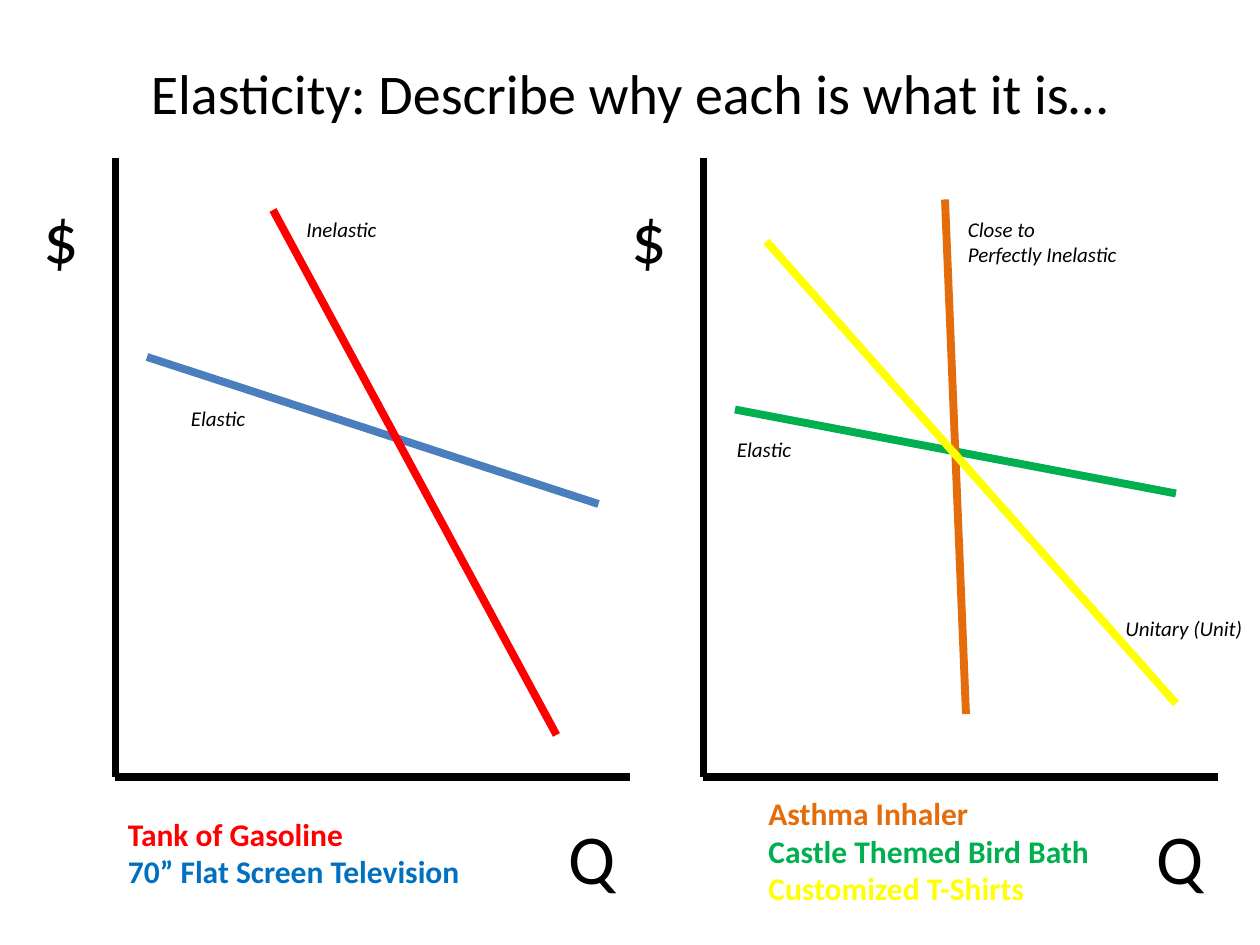
from lxml import etree
from pptx import Presentation
from pptx.dml.color import RGBColor
from pptx.enum.shapes import MSO_CONNECTOR
from pptx.enum.text import MSO_ANCHOR, MSO_AUTO_SIZE, PP_ALIGN
from pptx.oxml.ns import qn
from pptx.util import Inches, Pt

STRAIGHT = MSO_CONNECTOR.STRAIGHT
MIDDLE = MSO_ANCHOR.MIDDLE
GROW = MSO_AUTO_SIZE.SHAPE_TO_FIT_TEXT
CENTER = PP_ALIGN.CENTER

FONT = "Calibri"
CELLS_PER_INCH = 12
GRAPH_PITCH = 56
AXIS_LEFT, AXIS_TOP, AXIS_BOTTOM = 11, 15, 74
BLACK, RED, GREEN = "000000", "FF0000", "00B050"
ORANGE, YELLOW = "E46C0A", "FFFF00"

GASOLINE_GRAPH = {
    "axis_right": 60,
    "curves": [((14, 34), (57, 48), "4B7EBC"), ((26, 20), (53, 70), RED)],
    "labels": [("Inelastic", 28, 20, 3.6), ("Elastic", 17, 38, 3.6)],
    "goods_at": (11, 77, 34, 8.5),
    "goods": [("Tank of Gasoline", RED), ("70” Flat Screen Television", "0070C0")],
}
INHALER_GRAPH = {
    "axis_right": 60,
    "curves": [
        ((14, 39), (56, 47), GREEN),
        ((34, 19), (36, 68), ORANGE),
        ((17, 23), (56, 67), YELLOW),
    ],
    "labels": [
        ("Elastic", 13, 41, 3.6),
        ("Unitary (Unit)", 50, 58, 3.6),
        ("Close to\vPerfectly Inelastic", 35, 20, 6),
    ],
    "goods_at": (16, 75, 34, 12.1),
    "goods": [
        ("Asthma Inhaler", ORANGE),
        ("Castle Themed Bird Bath", GREEN),
        ("Customized T-Shirts", YELLOW),
    ],
}


def grid(cells):
    """Turn a count of grid cells into a length."""
    return Inches(cells / CELLS_PER_INCH)


def color(value):
    """Turn a hex string into a colour."""
    return RGBColor.from_string(value)


def style_para(para, size, hex_color, bold=False, italic=False):
    """Format every run of a paragraph."""
    for span in para.runs:
        span.font.name = FONT
        span.font.size = Pt(size)
        span.font.bold = bold
        span.font.italic = italic
        span.font.color.rgb = color(hex_color)


def add_line(page, start, end, hex_color):
    """Draw a thick straight line between two grid points."""
    line = page.shapes.add_connector(STRAIGHT, *map(grid, (*start, *end)))
    line.line.color.rgb = color(hex_color)
    line.line.width = Pt(4.5)
    etree.SubElement(line._element.spPr, qn("a:effectLst"))


def add_text(page, at, lines, size, **style):
    """Add a text box with one paragraph for each (text, colour) pair."""
    box = page.shapes.add_textbox(*map(grid, at))
    frame = box.text_frame
    frame.word_wrap = True
    frame.auto_size = GROW
    for index, (text, hex_color) in enumerate(lines):
        para = frame.add_paragraph() if index else frame.paragraphs[0]
        para.text = text
        style_para(para, size, hex_color, **style)


def add_title(page, text):
    """Place and format the title placeholder."""
    title = page.shapes.title
    title.left, title.top, title.width, title.height = map(grid, (6, 3.6, 108, 10.4))
    title.text_frame.text = text
    title.text_frame.vertical_anchor = MIDDLE
    para = title.text_frame.paragraphs[0]
    para.alignment = CENTER
    style_para(para, 32, BLACK)


def add_graph(page, left, graph):
    """Draw axes, demand curves, labels and goods from a left column."""
    axis = left + AXIS_LEFT
    origin = (axis, AXIS_BOTTOM)
    add_line(page, (axis, AXIS_TOP), origin, BLACK)
    add_line(page, origin, (left + graph["axis_right"], AXIS_BOTTOM), BLACK)
    add_text(page, (left + 3, 17.8, 5, 9.2), [("$", BLACK)], 40)
    add_text(page, (left + 53, 77, 6, 9.2), [("Q", BLACK)], 40)
    for (x1, y1), (x2, y2), hex_color in graph["curves"]:
        add_line(page, (left + x1, y1), (left + x2, y2), hex_color)
    column, row, width, height = graph["goods_at"]
    add_text(page, (left + column, row, width, height), graph["goods"], 18, bold=True)
    for text, column, row, height in graph["labels"]:
        add_text(page, (left + column, row, 22, height), [(text, BLACK)], 12, italic=True)


def main():
    """Build and save the elasticity slide."""
    deck = Presentation()
    deck.slide_width, deck.slide_height = Inches(10), Inches(7.5)
    page = deck.slides.add_slide(deck.slide_layouts.get_by_name("Title Only"))
    add_title(page, "Elasticity: Describe why each is what it is…")
    for index, graph in enumerate((GASOLINE_GRAPH, INHALER_GRAPH)):
        add_graph(page, index * GRAPH_PITCH, graph)
    deck.save("out.pptx")


if __name__ == "__main__":
    main()
